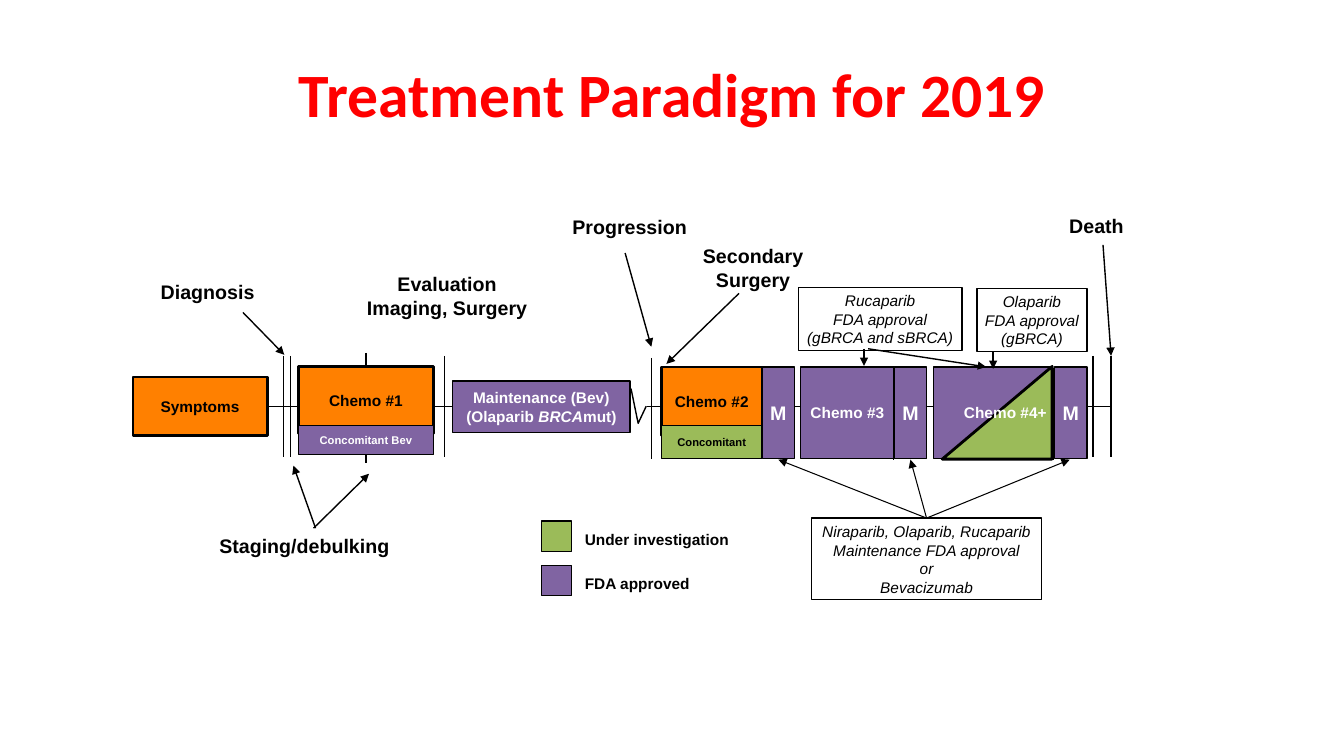
import dataclasses
import typing

import lxml.etree
import pptx
import pptx.dml.color
import pptx.enum.shapes
import pptx.enum.text
import pptx.oxml.ns
import pptx.util

Inches = pptx.util.Inches
Kind = pptx.enum.shapes.MSO_SHAPE
Align = pptx.enum.text.PP_ALIGN
Anchor = pptx.enum.text.MSO_ANCHOR
Fit = pptx.enum.text.MSO_AUTO_SIZE


@dataclasses.dataclass(frozen=True)
class Theme:
    black: str = "000000"
    white: str = "FFFFFF"
    red: str = "FF0000"
    orange: str = "FF8000"
    green: str = "9BBB59"
    purple: str = "8064A2"
    font: str = "Arial"
    head_font: str = "Calibri"
    head: int = 44
    label: int = 14
    body: int = 11
    small: int = 8
    thick: float = 2
    line: float = 1
    thin: float = 0.75


T = Theme()


class Box(typing.NamedTuple):
    x: float
    y: float
    w: float
    h: float
    text: str = ""
    fill: str = ""
    color: str = T.black
    size: int = T.body
    edge: float = T.line
    bold: bool = True
    top: bool = False


class Label(typing.NamedTuple):
    x: float
    y: float
    w: float
    h: float
    text: str
    size: int = T.label
    color: str = T.black
    align: typing.Any = Align.CENTER


class Line(typing.NamedTuple):
    x: float
    y: float
    to_x: float
    to_y: float
    width: float = T.line
    arrow: bool = False


def paint(text: str) -> pptx.dml.color.RGBColor:
    return pptx.dml.color.RGBColor.from_string(text)


def write(frame, text: str, size: int, color: str, align, bold: bool) -> None:
    """Fill a frame; the parts between asterisks are switched to italic."""
    frame.word_wrap = False
    for row, words in enumerate(text.split("\n")):
        para = frame.paragraphs[0] if row == 0 else frame.add_paragraph()
        para.alignment = align
        font = para.font
        font.name, font.size, font.bold = T.font, pptx.util.Pt(size), bold
        font.italic = not bold
        font.color.rgb = paint(color)
        for turn, part in enumerate(words.split("*")):
            run = para.add_run()
            run.text = part
            if turn % 2:
                run.font.italic = True


def pad(frame) -> None:
    frame.margin_left = frame.margin_right = Inches(0.07)
    frame.margin_top = frame.margin_bottom = Inches(0.04)


def add_box(slide, box: Box, kind=Kind.RECTANGLE):
    shape = slide.shapes.add_shape(kind, *map(Inches, box[:4]))
    shape.shadow.inherit = False
    if box.fill:
        shape.fill.solid()
        shape.fill.fore_color.rgb = paint(box.fill)
    else:
        shape.fill.background()
    shape.line.color.rgb = paint(T.black)
    shape.line.width = pptx.util.Pt(box.edge)
    if box.text:
        frame = shape.text_frame
        pad(frame)
        frame.vertical_anchor = Anchor.TOP if box.top else Anchor.MIDDLE
        write(frame, box.text, box.size, box.color, Align.CENTER, box.bold)
    return shape


def add_label(slide, label: Label) -> None:
    frame = slide.shapes.add_textbox(*map(Inches, label[:4])).text_frame
    pad(frame)
    write(frame, label.text, label.size, label.color, label.align, True)
    frame.auto_size = Fit.SHAPE_TO_FIT_TEXT


def add_line(slide, line: Line) -> None:
    link = slide.shapes.add_connector(
        pptx.enum.shapes.MSO_CONNECTOR.STRAIGHT, *map(Inches, line[:4]))
    link.line.color.rgb = paint(T.black)
    link.line.width = pptx.util.Pt(line.width)
    name = pptx.oxml.ns.qn
    if line.arrow:
        tip = lxml.etree.SubElement(link.line._get_or_add_ln(), name("a:tailEnd"))
        tip.set("type", "triangle")
    lxml.etree.SubElement(link._element.spPr, name("a:effectLst"))


def add_break(slide) -> None:
    spots = [(Inches(x), Inches(y)) for x, y in
             ((6.18, 4.03), (6.26, 3.86), (6.33, 4.2), (6.41, 4.03))]
    pen = slide.shapes.build_freeform(*spots[0], scale=1.0)
    pen.add_line_segments(spots[1:], close=False)
    shape = pen.convert_to_shape()
    shape.shadow.inherit = False
    shape.fill.background()
    shape.line.color.rgb = paint(T.black)
    shape.line.width = pptx.util.Pt(T.line)


# Time line and its marks
TOP, TALL, AXIS = 3.64, 0.91, 4.03
TICKS = [Line(x, 3.53, x, 4.53) for x in (2.81, 2.88, 4.41, 10.84, 11.02)]
AXES = [Line(2.07, AXIS, 6.18, AXIS), Line(6.42, AXIS, 11.03, AXIS),
        Line(3.63, 3.5, 3.63, 4.59), Line(6.46, 3.55, 6.46, 4.55)]

# Treatment blocks
BLOCKS = [
    Box(1.32, 3.74, 1.33, 0.58, "Symptoms", T.orange, edge=T.thick),
    Box(2.96, TOP, 1.34, 0.66, "Chemo #1", T.orange, edge=T.thick),
    Box(6.56, TOP, 1, 0.68, "Chemo #2", T.orange, edge=T.thick),
    Box(7.94, TOP, 0.93, TALL, "Chemo #3", T.purple, T.white),
    Box(9.26, TOP, 1.17, TALL, fill=T.purple),
    Box(4.49, 3.78, 1.76, 0.51, "Maintenance (Bev)\n(Olaparib *BRCA*mut)",
        T.purple, T.white),
    Box(2.96, 4.22, 1.34, 0.29, "Concomitant Bev", T.purple, T.white, T.small),
    Box(6.56, 4.22, 1, 0.33, "Concomitant", T.green, size=T.small),
] + [Box(x, TOP, 0.32, TALL, "M", T.purple, T.white, T.label)
     for x in (7.56, 8.87, 10.46)]
SEAMS = [Line(x, 3.65, x, 4.56, T.thin) for x in (8.86, 10.45)]
WEDGE = Box(9.43, 3.55, 0.92, 1.09, fill=T.green, edge=T.thick)

# Drug approvals
NOTES = [
    Box(8.05, 5.14, 2.28, 0.81, "Niraparib, Olaparib, Rucaparib\n"
        "Maintenance FDA approval\nor\nBevacizumab", bold=False, top=True),
    Box(7.92, 2.85, 1.62, 0.63, "Rucaparib\nFDA approval\n(gBRCA and sBRCA)",
        bold=False, top=True),
    Box(9.69, 2.86, 1.09, 0.63, "Olaparib\nFDA approval\n(gBRCA)",
        bold=False, top=True),
]

# Event names
EVENTS = [
    Label(1.52, 2.74, 1.08, 0.31, "Diagnosis"),
    Label(2.1, 5.26, 1.84, 0.31, "Staging/debulking"),
    Label(3.56, 2.66, 1.75, 0.54, "Evaluation\nImaging, Surgery"),
    Label(5.6, 2.09, 1.29, 0.31, "Progression"),
    Label(10.53, 2.08, 0.69, 0.31, "Death"),
    Label(6.87, 2.38, 1.2, 0.54, "Secondary\nSurgery"),
]
LAST = Label(9.49, 3.96, 1, 0.27, "Chemo #4+", T.body, T.white, Align.LEFT)
KEYS = [("Under investigation", T.green), ("FDA approved", T.purple)]

# Arrows, each from its start to its tip
ARROWS = [Line(*ends, arrow=True) for ends in (
    (2.41, 3.1, 2.82, 3.52), (3.13, 5.24, 2.91, 4.62), (3.11, 5.24, 3.66, 4.7),
    (6.2, 2.51, 6.46, 3.44), (10.94, 2.43, 11.02, 3.53), (7.33, 2.91, 6.61, 3.61),
    (9.85, 3.49, 9.85, 3.66), (8.57, 3.46, 8.57, 3.63), (8.61, 3.46, 9.78, 3.64))]
ARROWS += [Line(9.19, 5.14, x, 4.56, T.thin, True) for x in (7.72, 9.03, 10.61)]


def main() -> None:
    deck = pptx.Presentation()
    deck.slide_width, deck.slide_height = Inches(13.33), Inches(7.5)
    slide = deck.slides.add_slide(deck.slide_layouts[5])

    # Title
    title = slide.shapes.title
    title.left, title.top = Inches(0.67), Inches(0.3)
    title.width, title.height = Inches(12), Inches(1.25)
    title.text_frame.text = "Treatment Paradigm for 2019"
    title.text_frame.vertical_anchor = Anchor.MIDDLE
    para = title.text_frame.paragraphs[0]
    para.alignment = Align.CENTER
    para.font.name, para.font.size = T.head_font, pptx.util.Pt(T.head)
    para.font.bold = True
    para.font.color.rgb = paint(T.red)

    # Legend
    for row, (text, fill) in enumerate(KEYS):
        y = 5.17 + 0.44 * row
        add_box(slide, Box(5.37, y, 0.3, 0.3, fill=fill))
        add_label(slide, Label(5.73, y + 0.05, 1.6, 0.27, text, T.body,
                               align=Align.LEFT))

    # Diagram, from back to front
    for line in AXES + TICKS:
        add_line(slide, line)
    add_break(slide)
    for box in BLOCKS:
        add_box(slide, box)
    for line in SEAMS:
        add_line(slide, line)
    for box in NOTES:
        add_box(slide, box)
    add_box(slide, WEDGE, Kind.RIGHT_TRIANGLE).rotation = 270
    for label in EVENTS + [LAST]:
        add_label(slide, label)
    for line in ARROWS:
        add_line(slide, line)
    deck.save("out.pptx")


if __name__ == "__main__":
    main()
